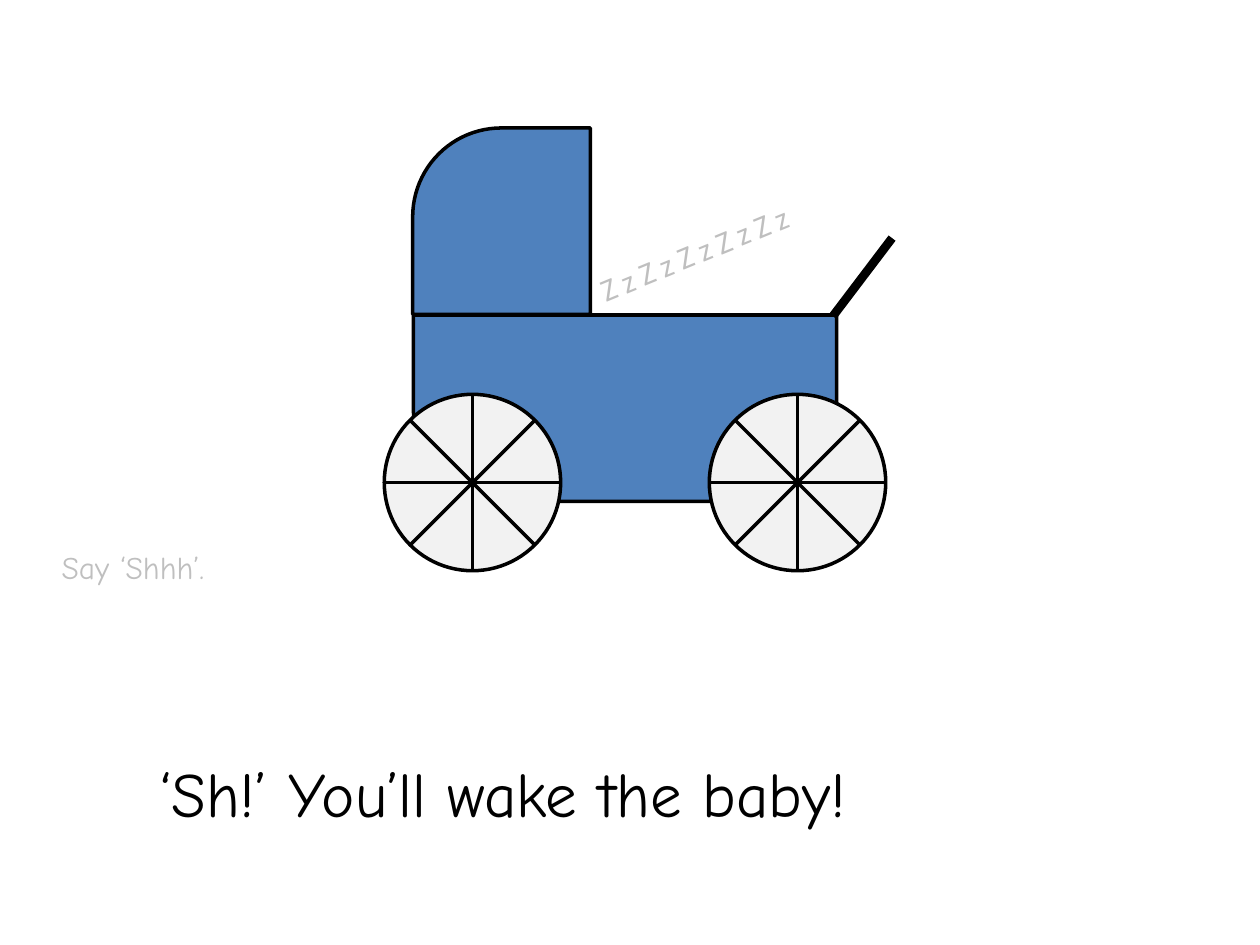
import math

import pptx
import pptx.dml.color
import pptx.enum.shapes
import pptx.enum.text
import pptx.oxml
import pptx.oxml.ns
import pptx.util

Inches = pptx.util.Inches
Pt = pptx.util.Pt
SHAPE = pptx.enum.shapes.MSO_SHAPE

COLORS = {"ink": "000000", "pram": "4F81BD", "wheel": "F2F2F2", "hint": "BFBFBF"}

# Content: text, (left, top, width, height), rotation, size, font, colour
TEXTS = [
    ("‘Sh!’ You’ll wake the baby!", (1.17, 5.94, 8.44, 0.71), 0, 36, "Comic Neue", "ink"),
    ("Z z Z z Z z Z z Z z", (4.6, 1.73, 2.19, 0.4), 337.6, 18, "Calibri", "hint"),
    ("Say ‘Shhh’.", (0.39, 4.3, 1.72, 0.4), 0, 18, "Comic Neue", "hint"),
]
# Pram parts: preset, (left, top, width, height), rotation, adjustments
BODY = (SHAPE.ROUND_2_SAME_RECTANGLE, (3.28, 2.5, 3.36, 1.48), 180, (0.5, 0))
HOOD = (SHAPE.ROUND_1_RECTANGLE, (3.24, 1.05, 1.48, 1.41), 270, (0.5,))
HANDLE = ((6.61, 2.51), (7.08, 1.89))
WHEEL_CENTERS = [(3.75, 3.83), (6.33, 3.83)]
WHEEL_RADIUS = 0.7
SPOKE_ANGLES = (0, 45, 90, 135)
OUTLINE = 2


def color(name):
    return pptx.dml.color.RGBColor.from_string(COLORS[name])


def add_part(shapes, preset, place, rotation, adjustments, fill):
    part = shapes.add_shape(preset, *map(Inches, place))
    part.shadow.inherit = False
    part.rotation = rotation
    for index, value in enumerate(adjustments):
        part.adjustments[index] = value
    part.fill.solid()
    part.fill.fore_color.rgb = color(fill)
    part.line.color.rgb = color("ink")
    part.line.width = Pt(OUTLINE)


def add_line(shapes, start, end, width=OUTLINE):
    line = shapes.add_connector(
        pptx.enum.shapes.MSO_CONNECTOR.STRAIGHT, *map(Inches, start + end))
    line.line.color.rgb = color("ink")
    line.line.width = Pt(width)
    properties = line._element.spPr
    properties.append(pptx.oxml.parse_xml(
        "<a:effectLst %s/>" % pptx.oxml.ns.nsdecls("a")))


def add_wheel(page, center):
    x, y = center
    wheel = page.shapes.add_group_shape().shapes
    diameter = 2 * WHEEL_RADIUS
    place = (x - WHEEL_RADIUS, y - WHEEL_RADIUS, diameter, diameter)
    add_part(wheel, SHAPE.OVAL, place, 0, (), "wheel")
    for angle in SPOKE_ANGLES:
        dx = WHEEL_RADIUS * math.cos(math.radians(angle))
        dy = WHEEL_RADIUS * math.sin(math.radians(angle))
        add_line(wheel, (x - dx, y + dy), (x + dx, y - dy))


def add_text(page, text, place, rotation, size, font, ink):
    box = page.shapes.add_textbox(*map(Inches, place))
    box.rotation = rotation
    frame = box.text_frame
    frame.word_wrap = True
    frame.auto_size = pptx.enum.text.MSO_AUTO_SIZE.SHAPE_TO_FIT_TEXT
    span = frame.paragraphs[0].add_run()
    span.text = text
    span.font.size = Pt(size)
    span.font.name = font
    span.font.color.rgb = color(ink)


def main():
    deck = pptx.Presentation()
    deck.slide_width, deck.slide_height = Inches(10), Inches(7.5)
    page = deck.slides.add_slide(deck.slide_layouts[6])

    # Pram, from back to front
    for part in (BODY, HOOD):
        add_part(page.shapes, *part, "pram")
    for center in WHEEL_CENTERS:
        add_wheel(page, center)
    add_line(page.shapes, *HANDLE, width=5)

    # Caption, snoring and hint
    for entry in TEXTS:
        add_text(page, *entry)

    deck.save("out.pptx")


if __name__ == "__main__":
    main()
